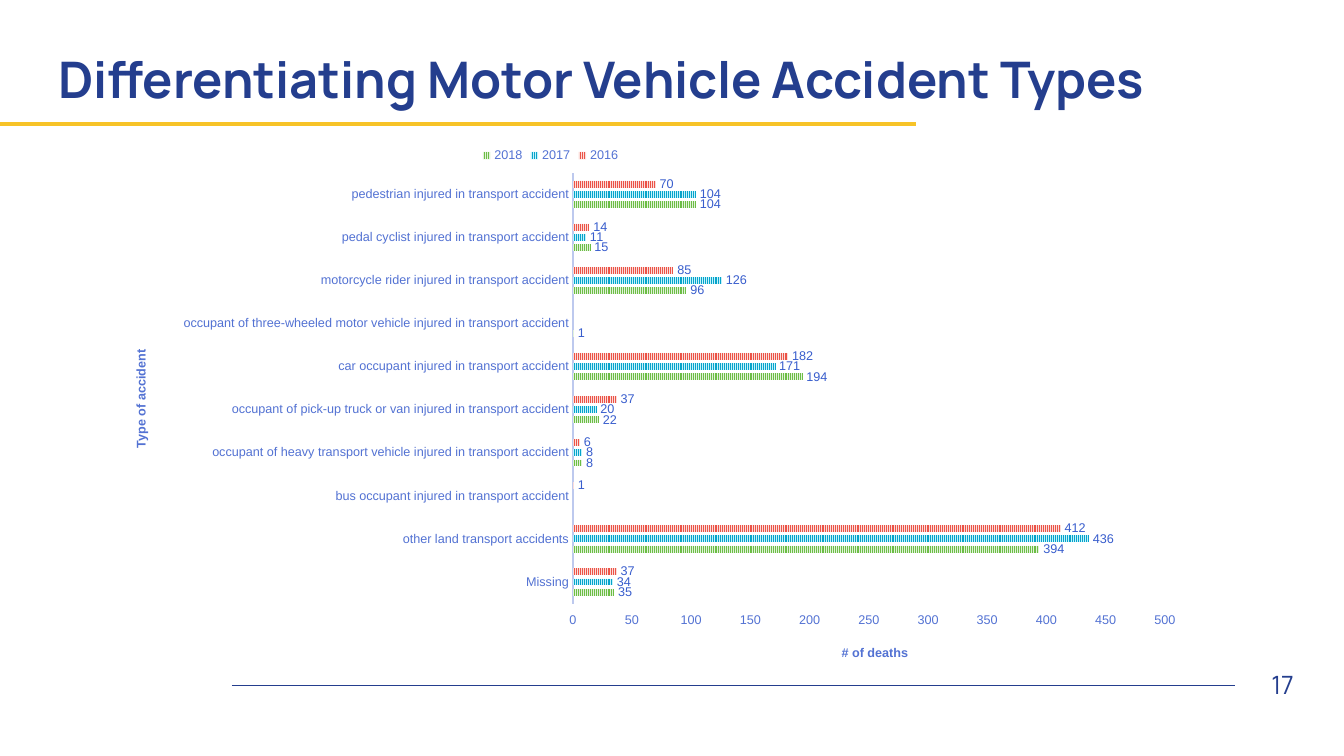
from pptx import Presentation
from pptx.chart.data import CategoryChartData
from pptx.dml.color import RGBColor
from pptx.enum.chart import XL_CHART_TYPE as ChartType, XL_LABEL_POSITION as LabelPosition
from pptx.enum.chart import XL_LEGEND_POSITION as LegendPosition
from pptx.enum.chart import XL_TICK_LABEL_POSITION as TickLabelPosition, XL_TICK_MARK as TickMark
from pptx.enum.dml import MSO_PATTERN as Pattern
from pptx.enum.shapes import MSO_CONNECTOR as Connector
from pptx.enum.text import MSO_ANCHOR as Anchor, PP_ALIGN as Align
from pptx.oxml import parse_xml
from pptx.oxml.ns import nsdecls, qn
from pptx.util import Inches, Pt

NAVY = RGBColor(0x24, 0x3E, 0x8E)
YELLOW = RGBColor(0xF7, 0xC3, 0x27)
AXIS_TEXT = RGBColor(0x53, 0x72, 0xD3)
AXIS_LINE = RGBColor(0xBD, 0xC9, 0xEE)
LABEL_BLUE = RGBColor(0x38, 0x5D, 0xCD)
RED, PALE_RED = RGBColor(0xEB, 0x53, 0x47), RGBColor(0xFB, 0xDD, 0xDA)
TEAL, PALE_TEAL = RGBColor(0x06, 0xA3, 0xC9), RGBColor(0xC4, 0xF2, 0xFD)
GREEN, PALE_GREEN = RGBColor(0x6C, 0xBD, 0x45), RGBColor(0xE2, 0xF2, 0xDA)


def style_font(font, size, color, name="Arial", bold=False):
    font.name, font.size, font.bold = name, Pt(size), bold
    font.color.rgb = color


def place(element, position, target="", **fractions):
    """Give a chart part a manual layout, in fractions of the chart."""
    old_layout = element.find(qn("c:layout"))
    if old_layout is not None:
        element.remove(old_layout)
    modes = '<c:xMode val="edge"/><c:yMode val="edge"/>'
    values = "".join(f'<c:{key} val="{value}"/>' for key, value in fractions.items())
    element.insert(position, parse_xml(
        f'<c:layout {nsdecls("c")}><c:manualLayout>{target}{modes}{values}'
        "</c:manualLayout></c:layout>"))


presentation = Presentation()
presentation.slide_width = Inches(13.33)
presentation.slide_height = Inches(7.5)
slide = presentation.slides.add_slide(presentation.slide_layouts[5])

# Footer rule and title underline
for left, right, y, color, width in [(2.3, 12.25, 6.8, NAVY, 1), (0, 9.09, 1.23, YELLOW, 3)]:
    rule = slide.shapes.add_connector(
        Connector.STRAIGHT, Inches(left), Inches(y), Inches(right), Inches(y))
    rule.line.color.rgb = color
    rule.line.width = Pt(width)
    rule._element.spPr.append(parse_xml(f'<a:effectLst {nsdecls("a")}/>'))

# Title
title = slide.shapes.title
title.left, title.top = Inches(0.48), Inches(0.4)
title.width, title.height = Inches(11.94), Inches(0.83)
title.text_frame.vertical_anchor = Anchor.MIDDLE
paragraph = title.text_frame.paragraphs[0]
paragraph.alignment = Align.LEFT
paragraph.line_spacing = 0.9
run = paragraph.add_run()
run.text = "Differentiating Motor Vehicle Accident Types"
style_font(run.font, 36, NAVY, "Manrope", True)

# Page number
page_number = slide.shapes.add_textbox(Inches(12.25), Inches(6.59), Inches(0.68), Inches(0.4))
page_number.text_frame.word_wrap = True
page_number.text_frame.vertical_anchor = Anchor.MIDDLE
paragraph = page_number.text_frame.paragraphs[0]
paragraph.alignment = Align.RIGHT
run = paragraph.add_run()
run.text = "17"
style_font(run.font, 18, NAVY, "Manrope")

# Chart data
yearly_deaths = [
    ("2016", [70, 14, 85, None, 182, 37, 6, 1, 412, 37], RED, PALE_RED),
    ("2017", [104, 11, 126, None, 171, 20, 8, None, 436, 34], TEAL, PALE_TEAL),
    ("2018", [104, 15, 96, 1, 194, 22, 8, None, 394, 35], GREEN, PALE_GREEN),
]
chart_data = CategoryChartData()
chart_data.categories = [
    "pedestrian injured in transport accident",
    "pedal cyclist injured in transport accident",
    "motorcycle rider injured in transport accident",
    "occupant of three-wheeled motor vehicle injured in transport accident",
    "car occupant injured in transport accident",
    "occupant of pick-up truck or van injured in transport accident",
    "occupant of heavy transport vehicle injured in transport accident",
    "bus occupant injured in transport accident",
    "other land transport accidents",
    "Missing",
]
for year, deaths, _, _ in yearly_deaths:
    chart_data.add_series(year, deaths)

# Chart
chart = slide.shapes.add_chart(
    ChartType.BAR_CLUSTERED, Inches(-1.05), Inches(1.36), Inches(13.02), Inches(5.23),
    chart_data).chart
style_font(chart.font, 10, NAVY)
chart.has_title = False
chart.has_legend = True
chart.legend.position = LegendPosition.TOP
chart.legend.include_in_layout = False
style_font(chart.legend.font, 9, AXIS_TEXT)
place(chart._chartSpace.chart.plotArea, 0, '<c:layoutTarget val="inner"/>',
      x=0.517, y=0.068, w=0.451, h=0.819)

# Bars and value labels
plot = chart.plots[0]
plot.gap_width, plot.overlap = 227, -48
plot.vary_by_categories = False
for series, (_, _, color, pale_color) in zip(plot.series, yearly_deaths):
    fill = series.format.fill
    fill.patterned()
    fill.pattern = Pattern.NARROW_VERTICAL
    fill.fore_color.rgb = color
    fill.back_color.rgb = pale_color
    series.format.line.fill.background()
    labels = series.data_labels
    labels.show_value = True
    labels.position = LabelPosition.OUTSIDE_END
    style_font(labels.font, 9, LABEL_BLUE)

# Axes
category_axis, value_axis = chart.category_axis, chart.value_axis
for axis, text, x, y in [(category_axis, "Type of accident", 0.18, 0.4),
                         (value_axis, "# of deaths", 0.72, 0.96)]:
    axis.major_tick_mark = axis.minor_tick_mark = TickMark.NONE
    axis.has_major_gridlines = False
    style_font(axis.tick_labels.font, 9, AXIS_TEXT)
    run = axis.axis_title.text_frame.paragraphs[0].add_run()
    run.text = text
    style_font(run.font, 9, AXIS_TEXT, bold=True)
    place(axis.axis_title._element, 1, x=x, y=y)
category_axis.reverse_order = True
category_axis.format.line.color.rgb = AXIS_LINE
category_axis.format.line.width = Pt(1.5)
# Categories run downwards, so the high side is the bottom of the plot
value_axis.tick_label_position = TickLabelPosition.HIGH
value_axis.minimum_scale, value_axis.maximum_scale = 0, 500
value_axis.major_unit = 50
value_axis.format.line.fill.background()

presentation.save("out.pptx")
